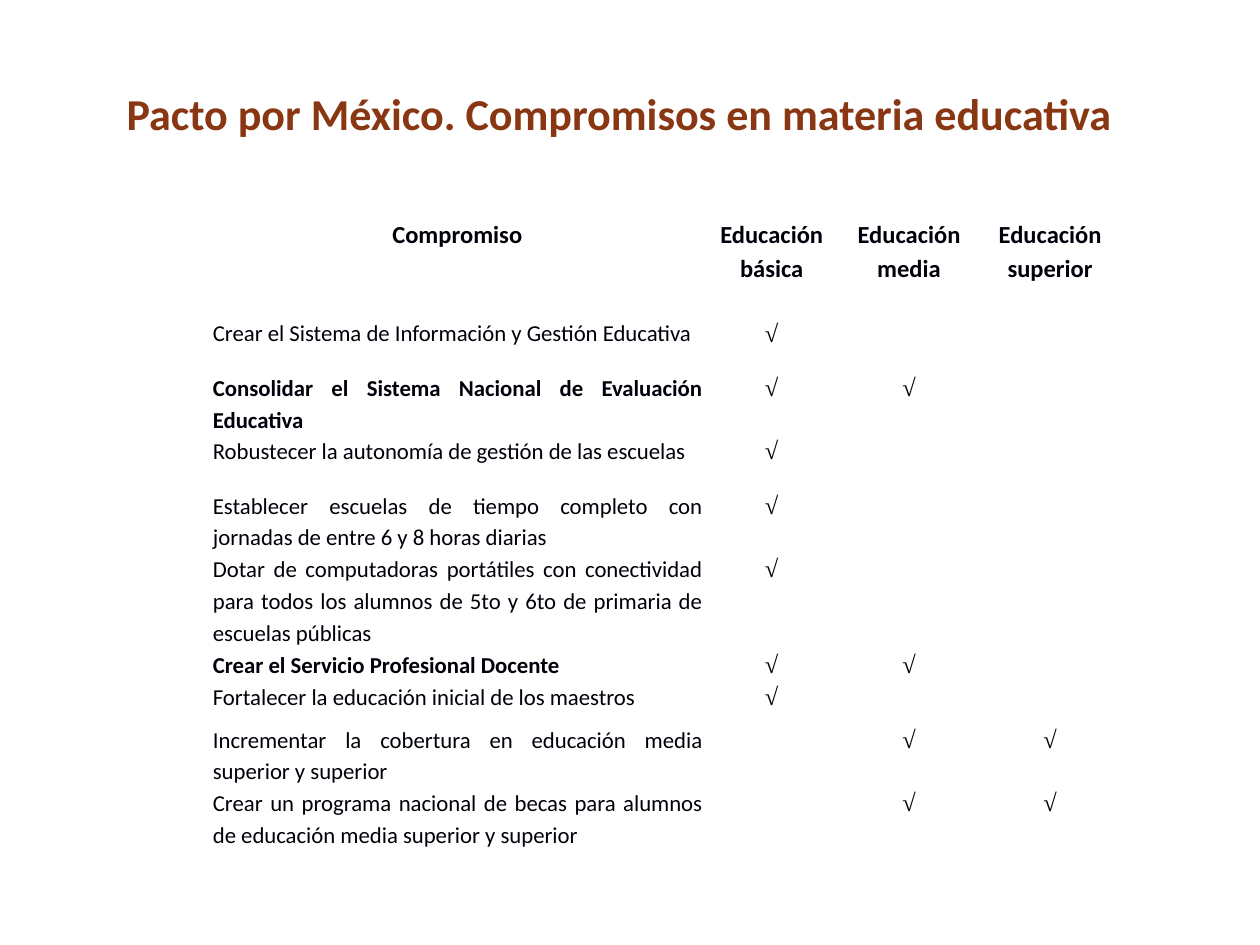
from lxml import etree
from pptx import Presentation
from pptx.dml.color import RGBColor
from pptx.enum.text import MSO_ANCHOR, MSO_AUTO_SIZE, PP_ALIGN
from pptx.oxml.ns import qn
from pptx.util import Inches, Pt

CENTER, JUSTIFY = PP_ALIGN.CENTER, PP_ALIGN.JUSTIFY
MIDDLE = MSO_ANCHOR.MIDDLE
NO_AUTOFIT = MSO_AUTO_SIZE.NONE
TITLE_ONLY = 5

TITLE = "Pacto por México. Compromisos en materia educativa"
HEADINGS = ["Compromiso", "Educación básica", "Educación media", "Educación superior"]
COLUMN_WIDTHS = [3.9, 1.09, 1.09, 1.15]
HEADING_HEIGHT = 0.8
CHECK = "√"
BASIC, MIDDLE_LEVEL, HIGHER = 1, 2, 3
COMMITMENTS = [
    ("Crear el Sistema de Información y Gestión Educativa", {BASIC}, 0.43),
    ("Consolidar el Sistema Nacional de Evaluación Educativa", {BASIC, MIDDLE_LEVEL}, 0.43),
    ("Robustecer la autonomía de gestión de las escuelas", {BASIC}, 0.43),
    ("Establecer escuelas de tiempo completo con jornadas de entre 6 y 8 horas diarias",
     {BASIC}, 0.43),
    ("Dotar de computadoras portátiles con conectividad para todos los alumnos "
     "de 5to y 6to de primaria de escuelas públicas", {BASIC}, 0.65),
    ("Crear el Servicio Profesional Docente", {BASIC, MIDDLE_LEVEL}, 0.22),
    ("Fortalecer la educación inicial de los maestros", {BASIC}, 0.34),
    ("Incrementar la cobertura en educación media superior y superior",
     {MIDDLE_LEVEL, HIGHER}, 0.43),
    ("Crear un programa nacional de becas para alumnos de educación media superior y superior",
     {MIDDLE_LEVEL, HIGHER}, 0.65),
]


def color(hex_text):
    """Turn a hex string into a colour."""
    return RGBColor.from_string(hex_text)


def add_span(para, text, size, hex_text, bold=False, font="Calibri"):
    """Add one formatted run to a paragraph."""
    span = para.add_run()
    span.text = text
    span.font.name = font
    span.font.size = Pt(size)
    span.font.bold = bold
    span.font.color.rgb = color(hex_text)


def place_title(page, left, top, width, height):
    """Move and fill the title placeholder."""
    title = page.shapes.title
    title.left, title.top = Inches(left), Inches(top)
    title.width, title.height = Inches(width), Inches(height)
    frame = title.text_frame
    frame.word_wrap = True
    frame.auto_size = NO_AUTOFIT
    frame.vertical_anchor = MIDDLE
    para = frame.paragraphs[0]
    para.alignment = CENTER
    add_span(para, TITLE, 25.2, "883712", bold=True)
    add_span(para, "\t", 36, "883712", bold=True)


def fill_cell(cell, text, size, align=CENTER, bold=False, font="Calibri"):
    """Format one white cell and write its text."""
    cell.fill.solid()
    cell.fill.fore_color.rgb = color("FFFFFF")
    cell.margin_left = cell.margin_right = Inches(0.01)
    cell.margin_top = cell.margin_bottom = 0
    para = cell.text_frame.paragraphs[0]
    para.alignment = align
    para.line_spacing = 1.15
    if text:
        add_span(para, text, size, "00000A", bold, font)
    else:
        etree.SubElement(para._p, qn("a:endParaRPr"), sz="1000")


def place_table(page, left, top, width, height):
    """Add the table of commitments and the levels they reach."""
    table = page.shapes.add_table(
        len(COMMITMENTS) + 1, len(HEADINGS),
        Inches(left), Inches(top), Inches(width), Inches(height)).table
    table.first_row = table.horz_banding = False
    for column, column_width in zip(table.columns, COLUMN_WIDTHS):
        column.width = Inches(column_width)
    heights = [HEADING_HEIGHT] + [commitment[2] for commitment in COMMITMENTS]
    for row, row_height in zip(table.rows, heights):
        row.height = Inches(row_height)
    for index, heading in enumerate(HEADINGS):
        fill_cell(table.cell(0, index), heading, 14, bold=True)
    for number, (text, levels, _) in enumerate(COMMITMENTS, start=1):
        key_commitment = levels == {BASIC, MIDDLE_LEVEL}
        fill_cell(table.cell(number, 0), text, 13, JUSTIFY, key_commitment)
        for level in (BASIC, MIDDLE_LEVEL, HIGHER):
            mark = CHECK if level in levels else ""
            fill_cell(table.cell(number, level), mark, 14, font="Times New Roman")


def main():
    """Build the slide and save it."""
    deck = Presentation()
    deck.slide_width, deck.slide_height = Inches(10), Inches(7.5)
    page = deck.slides.add_slide(deck.slide_layouts[TITLE_ONLY])
    place_title(page, 0.4, 0.46, 9.21, 0.75)
    place_table(page, 1.68, 1.71, 7.23, 5.4)
    deck.save("out.pptx")


if __name__ == "__main__":
    main()
